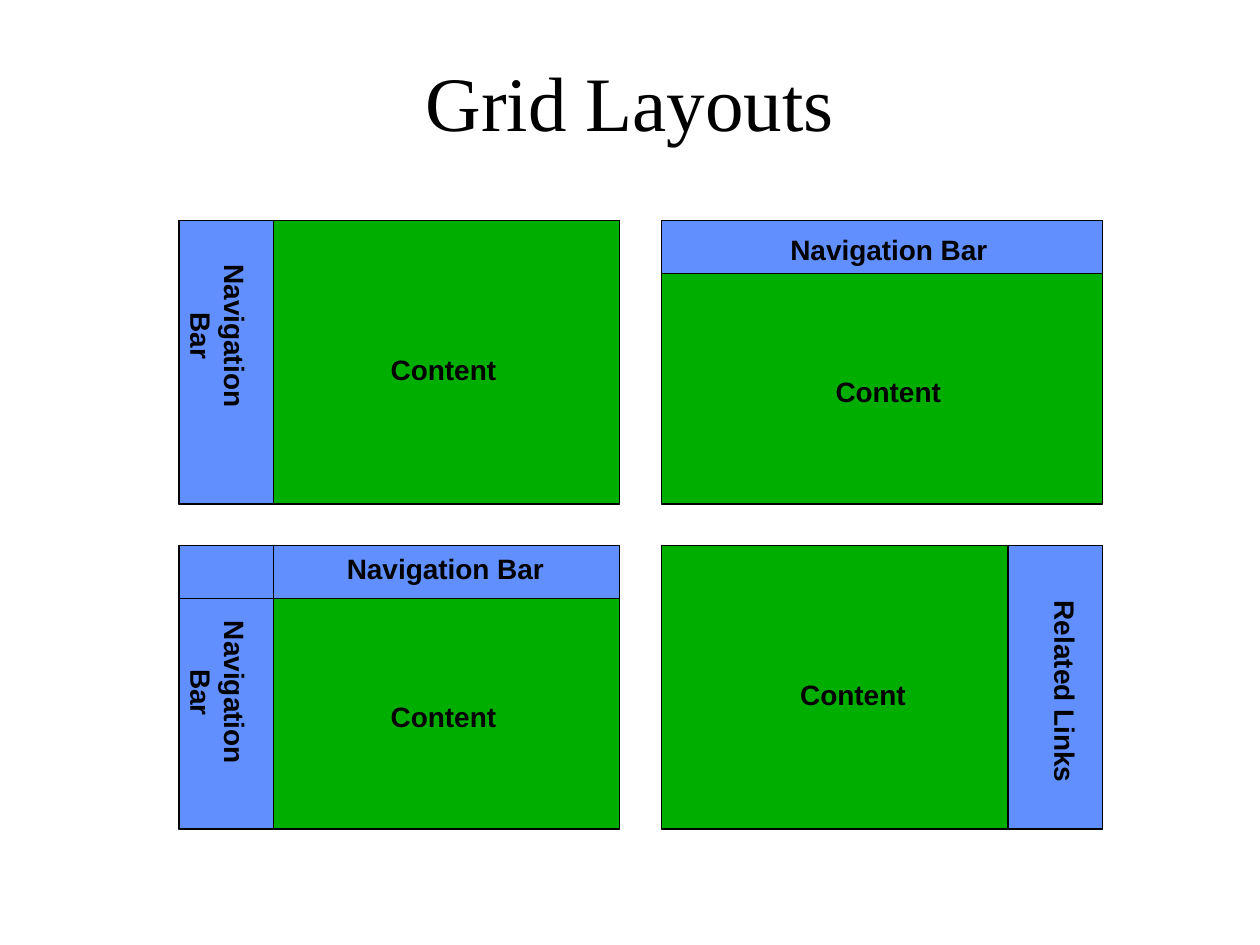
from pptx import Presentation
from pptx.dml.color import RGBColor
from pptx.enum.shapes import MSO_SHAPE
from pptx.enum.text import MSO_ANCHOR, MSO_AUTO_SIZE, PP_ALIGN
from pptx.util import Inches, Pt

RECT = MSO_SHAPE.RECTANGLE
MIDDLE = MSO_ANCHOR.MIDDLE
GROW = MSO_AUTO_SIZE.SHAPE_TO_FIT_TEXT
CENTER = PP_ALIGN.CENTER

GREEN, BLUE, BLACK = "00AE00", "618FFD", "000000"
LEFT, RIGHT = 1.42, 5.25
TOP, LOW = 1.75, 4.33
WIDE, HIGH = 3.5, 2.25
SIDE, BAR = 0.75, 0.42


def color(code):
    return RGBColor.from_string(code)


class Deck:
    def __init__(self):
        self.prs = Presentation()
        self.prs.slide_width = Inches(10)
        self.prs.slide_height = Inches(7.5)
        self.slide = self.prs.slides.add_slide(self.prs.slide_layouts[6])

    def box(self, x, y, w, h, fill):
        shape = self.slide.shapes.add_shape(
            RECT, Inches(x), Inches(y), Inches(w), Inches(h))
        shape.shadow.inherit = False
        shape.fill.solid()
        shape.fill.fore_color.rgb = color(fill)
        shape.line.color.rgb = color(BLACK)
        shape.line.width = Pt(0.75)

    def text(self, words, x, y, w, h, size, face, bold=False, wrap=True):
        """Add centred text and return its frame."""
        frame = self.slide.shapes.add_textbox(
            Inches(x), Inches(y), Inches(w), Inches(h)).text_frame
        frame.word_wrap = wrap
        para = frame.paragraphs[0]
        para.text = words
        para.alignment = CENTER
        font = para.font
        font.name, font.size, font.bold = face, Pt(size), bold
        font.color.rgb = color(BLACK)
        return frame

    def title(self, words):
        frame = self.text(words, 0.75, 0.17, 8.5, 1.25, 44, "Times New Roman")
        frame.vertical_anchor = MIDDLE

    def label(self, words, x, y, w):
        frame = self.text(words, x, y, w, 0.37, 16, "Arial", True, False)
        frame.auto_size = GROW

    def tall(self, words, x, y):
        """Add a label that reads from top to bottom."""
        frame = self.text(words, x, y, 0.47, 1.75, 16, "Arial", True)
        frame.auto_size = GROW
        frame._txBody.bodyPr.set("vert", "eaVert")


def main():
    deck = Deck()
    deck.title("Grid Layouts")

    for y in (TOP, LOW):
        for x in (LEFT, RIGHT):
            deck.box(x, y, WIDE, HIGH, GREEN)

    for x, y, w, h in (
        (LEFT, TOP, SIDE, HIGH),
        (RIGHT, TOP, WIDE, BAR),
        (LEFT, LOW, SIDE, HIGH),
        (LEFT, LOW, WIDE, BAR),
        (LEFT, LOW, SIDE, BAR),
        (RIGHT + WIDE - SIDE, LOW, SIDE, HIGH),
    ):
        deck.box(x, y, w, h, BLUE)

    for x, y in ((3, 2.75), (6.53, 2.92), (3, 5.5), (6.25, 5.33)):
        deck.label("Content", x, y, 1.04)
    for x, y in ((6.17, 1.8), (2.65, LOW)):
        deck.label("Navigation Bar", x, y, 1.77)

    for words, x, y in (
        ("Navigation Bar", 1.58, 2),
        ("Navigation Bar", 1.58, 4.83),
        ("Related Links", 8.17, 4.67),
    ):
        deck.tall(words, x, y)

    deck.prs.save("out.pptx")


if __name__ == "__main__":
    main()
